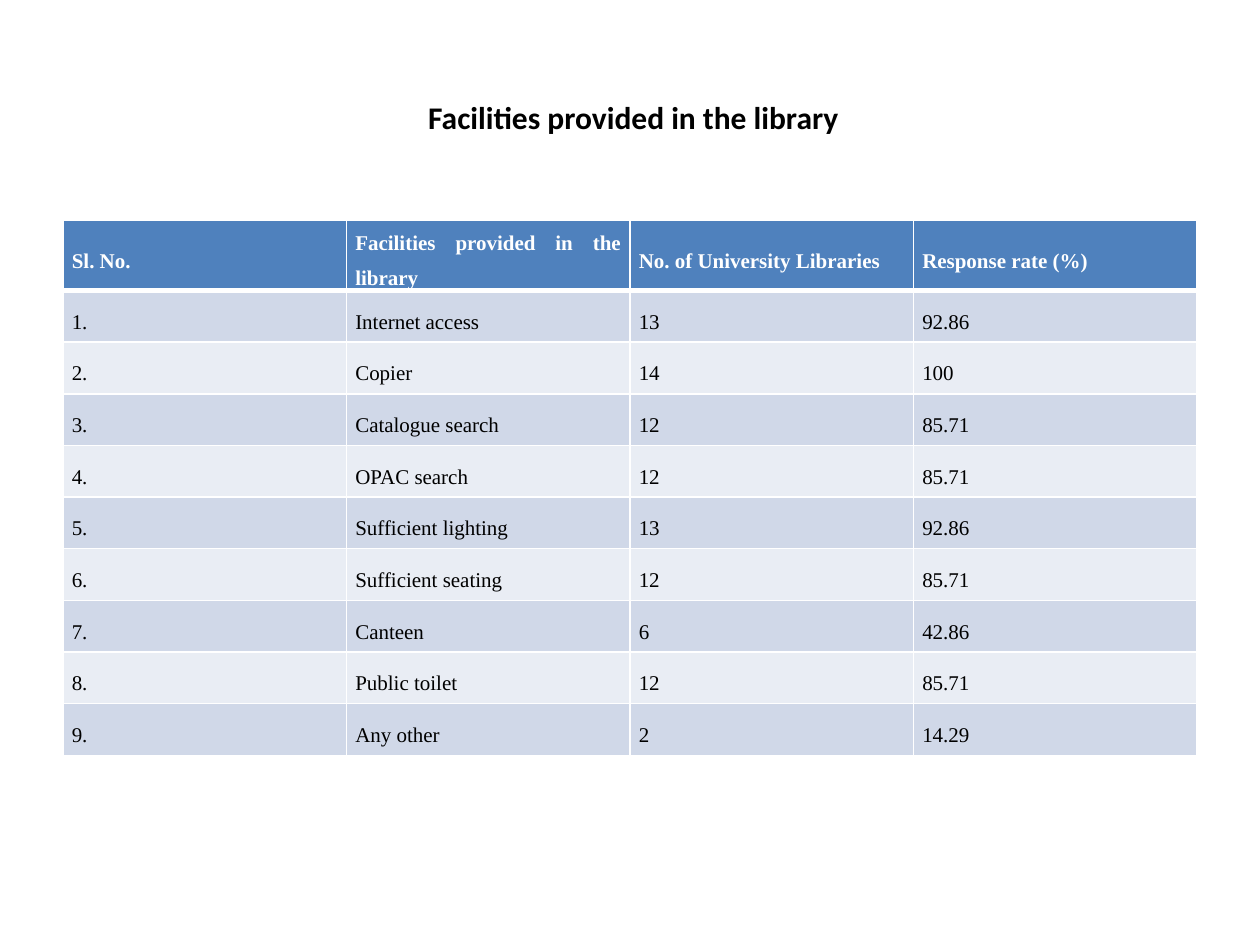
from lxml import etree
from pptx import Presentation
from pptx import util as u
from pptx.dml.color import RGBColor
from pptx.enum import text
from pptx.oxml.ns import qn

# Content
TITLE = " Facilities provided in the library"
HEADER = ("Sl. No.", "Facilities provided in the library",
          "No. of University Libraries", "Response rate (%)")
FACILITIES = [
    ("Internet access", "13", "92.86"),
    ("Copier", "14", "100"),
    ("Catalogue search", "12", "85.71"),
    ("OPAC search", "12", "85.71"),
    ("Sufficient lighting", "13", "92.86"),
    ("Sufficient seating", "12", "85.71"),
    ("Canteen", "6", "42.86"),
    ("Public toilet", "12", "85.71"),
    ("Any other", "2", "14.29"),
]
ROWS = [HEADER] + [(f"{number}.", *facility)
                   for number, facility in enumerate(FACILITIES, 1)]

# Layout in inches, colours
WIDTH, HEIGHT, MARGIN = 10, 7.5, 0.5
BODY_WIDTH = WIDTH - 2 * MARGIN
TITLE_TOP, TITLE_HEIGHT = 0.3, 1.25
TABLE_TOP, TABLE_HEIGHT, ROW_HEIGHT = 1.75, 4.25, 0.41
WHITE, BLACK, HEADER_FILL = "FFFFFF", "000000", "4F81BD"
BANDS = ("E9EDF4", "D0D8E8")


def colour(code):
    return RGBColor.from_string(code)


def set_font(paragraph, name, size, code, bold):
    font = paragraph.font
    font.name, font.size, font.bold = name, u.Pt(size), bold
    font.color.rgb = colour(code)


def set_borders(cell, bottom):
    properties = cell._tc.get_or_add_tcPr()
    widths = {"a:lnL": 1, "a:lnR": 1, "a:lnT": 1, "a:lnB": bottom}
    for place, (tag, width) in enumerate(widths.items()):
        line = etree.Element(qn(tag), w=str(u.Pt(width)))
        fill = etree.SubElement(line, qn("a:solidFill"))
        etree.SubElement(fill, qn("a:srgbClr"), val=WHITE)
        properties.insert(place, line)


def format_cell(cell, words, row):
    is_header = row == 0
    cell.text = words
    cell.vertical_anchor = text.MSO_ANCHOR.MIDDLE
    cell.margin_left = cell.margin_right = u.Inches(0.07)
    cell.margin_top = cell.margin_bottom = 0
    cell.fill.solid()
    cell.fill.fore_color.rgb = colour(HEADER_FILL if is_header else BANDS[row % 2])
    set_borders(cell, 3 if is_header or row == 0 else 1)
    paragraph = cell.text_frame.paragraphs[0]
    paragraph.alignment = text.PP_ALIGN.JUSTIFY
    paragraph.line_spacing = 1.5
    paragraph.space_before = paragraph.space_after = u.Pt(6)
    set_font(paragraph, "Times New Roman", 12,
             WHITE if is_header else BLACK, is_header)


deck = Presentation()
deck.slide_width, deck.slide_height = u.Inches(WIDTH), u.Inches(HEIGHT)
slide = deck.slides.add_slide(deck.slide_layouts[5])

# Title
title = slide.shapes.title
title.left, title.top = u.Inches(MARGIN), u.Inches(TITLE_TOP)
title.width, title.height = u.Inches(BODY_WIDTH), u.Inches(TITLE_HEIGHT)
title.text_frame.text = TITLE
title.text_frame.vertical_anchor = text.MSO_ANCHOR.MIDDLE
heading = title.text_frame.paragraphs[0]
heading.alignment = text.PP_ALIGN.CENTER
set_font(heading, "Calibri", 18, BLACK, True)

# Table
frame = slide.shapes.add_table(
    len(ROWS), len(HEADER), u.Inches(MARGIN), u.Inches(TABLE_TOP),
    u.Inches(BODY_WIDTH), u.Inches(TABLE_HEIGHT))
table = frame.table
for row, values in enumerate(ROWS):
    table.rows[row].height = u.Inches(ROW_HEIGHT)
    for column, words in enumerate(values):
        format_cell(table.cell(row, column), words, row)
frame.height = u.Inches(TABLE_HEIGHT)

deck.save("out.pptx")
